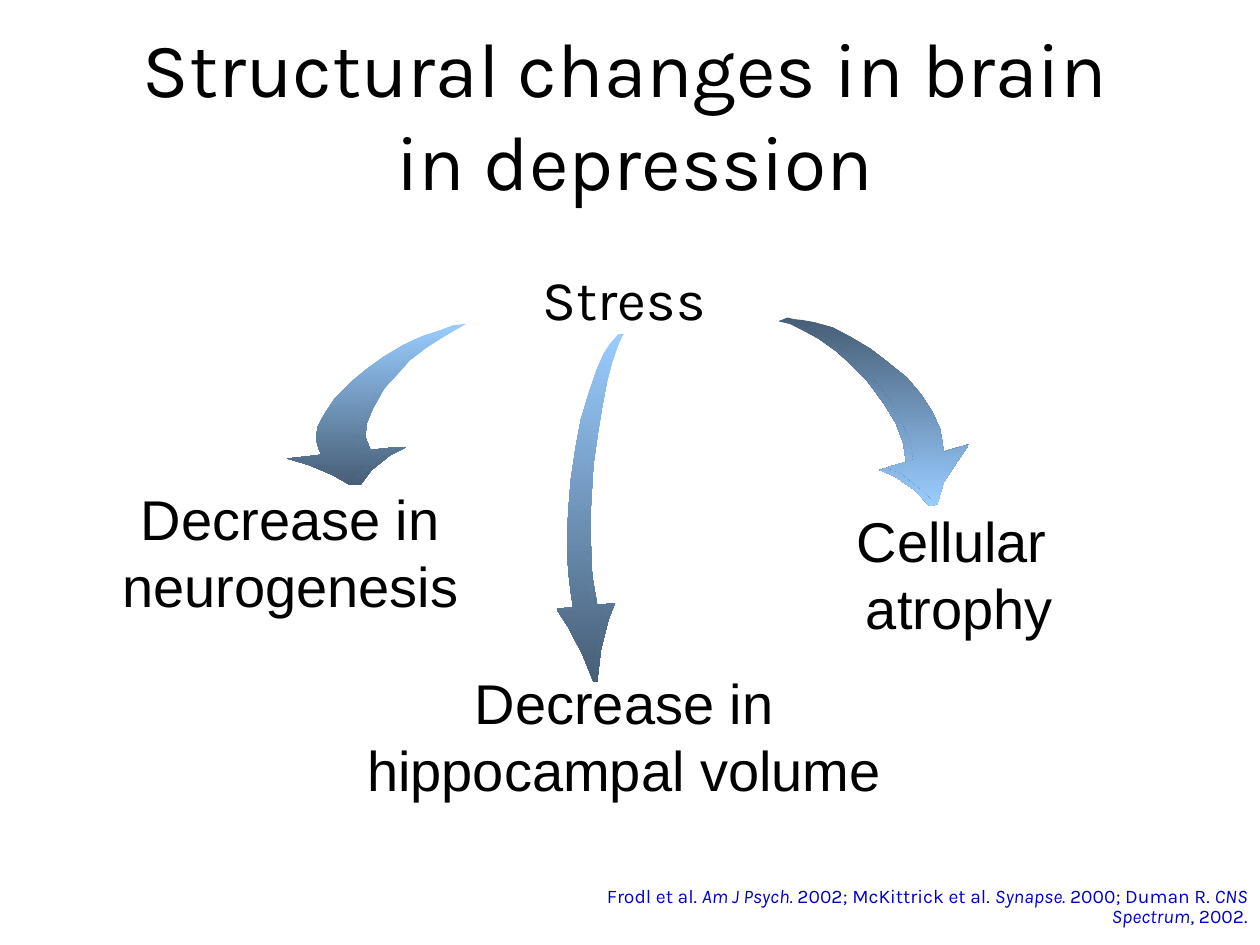
from pptx import Presentation
from pptx.dml.color import RGBColor
from pptx.enum.shapes import MSO_SHAPE as Shape
from pptx.enum.text import MSO_ANCHOR as Anchor, MSO_AUTO_SIZE as AutoSize, PP_ALIGN as Align
from pptx.util import Inches, Pt

LIGHT, DARK = "99CCFF", "475E76"
BLACK, BLUE = "000000", "0000CC"


def color(value):
    return RGBColor.from_string(value)


class SlideBuilder:
    heading_font = "Karla"
    label_font = "Arial"

    def __init__(self, presentation):
        self.slide = presentation.slides.add_slide(presentation.slide_layouts[6])
        self.slide.background.fill.solid()
        self.slide.background.fill.fore_color.rgb = color("FFFFFF")

    def fill_text(self, shape, lines, size, font, ink=BLACK, align=Align.CENTER,
                  anchor=Anchor.MIDDLE):
        """Each line is a list of (text, italic) runs."""
        frame = shape.text_frame
        frame.word_wrap = True
        frame.vertical_anchor = anchor
        paragraph = frame.paragraphs[0]
        paragraph.alignment = align
        for number, runs in enumerate(lines):
            if number:
                paragraph.add_line_break()
            for text, italic in runs:
                run = paragraph.add_run()
                run.text = text
                run.font.name = font
                run.font.size = Pt(size)
                run.font.italic = italic
                run.font.color.rgb = color(ink)
        return paragraph

    def text(self, box, lines, size, **style):
        shape = self.slide.shapes.add_textbox(*map(Inches, box))
        return self.fill_text(shape, lines, size, self.heading_font, **style)

    def label(self, box, *lines):
        shape = self.slide.shapes.add_shape(Shape.ROUNDED_RECTANGLE, *map(Inches, box))
        shape.shadow.inherit = False
        shape.fill.background()
        shape.line.fill.background()
        self.fill_text(shape, [[(line, False)] for line in lines], 32, self.label_font)
        shape.text_frame.auto_size = AutoSize.SHAPE_TO_FIT_TEXT

    def arrow(self, outlines, top, bottom):
        """Layered outlines in hundredths of an inch, shaded from top to bottom."""
        group = self.slide.shapes.add_group_shape()
        for start, *points in outlines:
            builder = group.shapes.build_freeform(*start, scale=Inches(0.01))
            builder.add_line_segments(points, close=True)
            shape = builder.convert_to_shape()
            shape.shadow.inherit = False
            shape.line.fill.background()
            shape.fill.gradient()
            shape.fill.gradient_angle = 270
            for stop, shade, position in zip(shape.fill.gradient_stops, (top, bottom), (0, 1)):
                stop.color.rgb = color(shade)
                stop.position = position


# Arrow outlines: outer edge, head, inner edge
LEFT_ARROW = [
    [(370, 257), (360, 258), (348, 263), (333, 270), (321, 278), (307, 287), (293, 297),
     (280, 309), (269, 320), (261, 332), (258, 344), (258, 352), (262, 360),
     (229, 364), (248, 369), (267, 376), (278, 385), (286, 385), (295, 373), (310, 361),
     (322, 355), (294, 357),
     (290, 347), (291, 336), (296, 324), (305, 308), (317, 295), (325, 286), (338, 276),
     (349, 269), (361, 262)],
    [(361, 258), (347, 263), (335, 267), (320, 274), (305, 283), (291, 293), (279, 303),
     (266, 316), (258, 328), (252, 339), (251, 349), (253, 356), (255, 361),
     (228, 364), (245, 369), (264, 377), (278, 385), (288, 374), (302, 362),
     (314, 355), (286, 358),
     (283, 348), (284, 337), (288, 324), (297, 309), (308, 296), (317, 287), (329, 277),
     (340, 270), (352, 263)],
]
MIDDLE_ARROW = [
    [(495, 265), (491, 265), (485, 274), (479, 287), (474, 303), (468, 321), (463, 341),
     (459, 367), (455, 391), (453, 418), (453, 444), (455, 462), (458, 482),
     (442, 483), (453, 499), (464, 519), (471, 541), (474, 541), (477, 516), (483, 492),
     (488, 479), (474, 480),
     (470, 457), (469, 431), (469, 403), (471, 369), (475, 341), (478, 323), (482, 302),
     (486, 287), (491, 273)],
    [(491, 265), (484, 273), (479, 281), (473, 295), (467, 313), (461, 333), (457, 354),
     (453, 381), (451, 406), (450, 431), (451, 453), (453, 470), (455, 483),
     (442, 484), (451, 498), (462, 519), (471, 541), (474, 517), (479, 492),
     (484, 479), (470, 481),
     (467, 457), (465, 431), (465, 404), (467, 370), (471, 342), (473, 324), (478, 302),
     (482, 288), (487, 274)],
]
RIGHT_ARROW = [
    [(618, 255), (625, 252), (637, 255), (650, 259), (663, 266), (677, 273), (691, 282),
     (706, 295), (720, 307), (731, 321), (739, 336), (742, 347), (743, 360),
     (768, 353), (757, 367), (747, 384), (744, 400), (738, 402), (726, 389), (710, 378),
     (698, 373), (719, 367),
     (717, 352), (711, 336), (702, 321), (688, 302), (674, 288), (664, 279), (650, 269),
     (639, 263), (627, 257)],
    [(625, 253), (637, 254), (647, 256), (661, 260), (676, 268), (691, 277), (704, 287),
     (720, 300), (731, 313), (740, 327), (746, 340), (748, 351), (749, 359),
     (769, 353), (760, 366), (749, 383), (744, 400), (731, 388), (716, 376),
     (704, 371), (725, 365),
     (723, 350), (716, 335), (708, 319), (694, 301), (680, 287), (670, 277), (656, 267),
     (645, 261), (633, 256)],
]


def main():
    presentation = Presentation()
    presentation.slide_width, presentation.slide_height = Inches(10), Inches(7.5)
    builder = SlideBuilder(presentation)

    # Cause and its three effects
    builder.text((3.55, 1.92, 2.81, 0.89), [[("Stress", False)]], 32)
    builder.label((0.52, 3.74, 3.57, 1.28), "Decrease in neurogenesis")
    builder.label((5.92, 3.91, 3.39, 1.28), "Cellular ", "atrophy")
    builder.label((2.44, 5.2, 5.03, 1.28), "Decrease in hippocampal volume")

    # Sources
    sources = [
        ("Frodl et al. ", False), ("Am J Psych.", True),
        (" 2002; McKittrick et al. ", False), ("Synapse.", True),
        (" 2000; Duman R. ", False), ("CNS Spectrum", True), (", 2002.", False),
    ]
    citation = builder.text((4.42, 7, 5.58, 0.41), [sources], 11, ink=BLUE,
                            align=Align.RIGHT, anchor=Anchor.TOP)
    citation.line_spacing = 0.85

    # Title
    builder.text((0.25, 0.08, 9.58, 1.64),
                 [[("Structural changes in brain ", False)], [("in depression", False)]], 44)

    # Arrows from the cause to each effect
    builder.arrow(LEFT_ARROW, LIGHT, DARK)
    builder.arrow(MIDDLE_ARROW, LIGHT, DARK)
    builder.arrow(RIGHT_ARROW, DARK, LIGHT)

    presentation.save("out.pptx")


if __name__ == "__main__":
    main()
